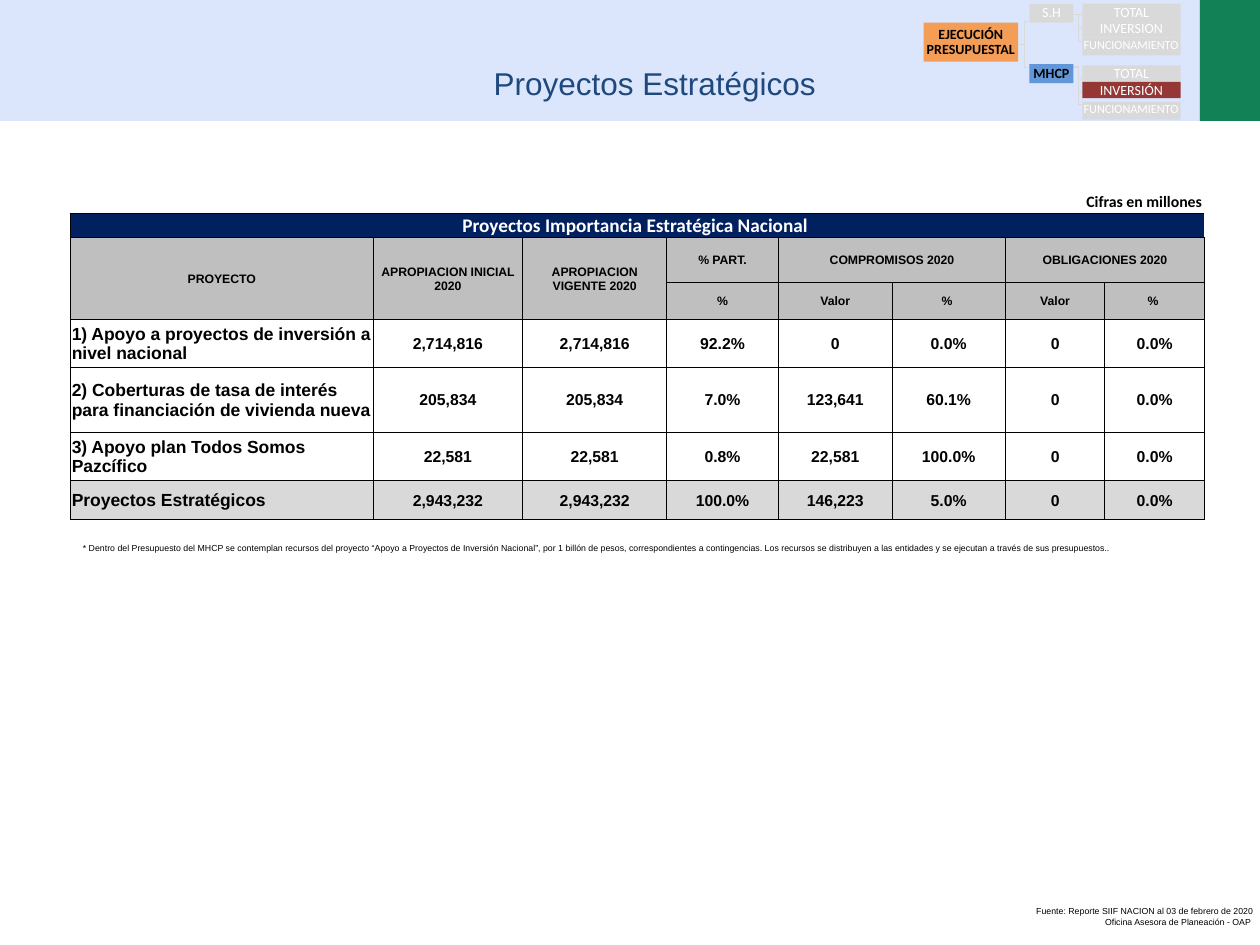
from lxml import etree
from pptx import Presentation, util as u
from pptx.dml.color import RGBColor
from pptx.enum import shapes, text
from pptx.oxml import ns

Inches, Pt = u.Inches, u.Pt
LEFT, CENTER, RIGHT, JUSTIFY = (text.PP_ALIGN.LEFT, text.PP_ALIGN.CENTER,
                                text.PP_ALIGN.RIGHT, text.PP_ALIGN.JUSTIFY)
TOP, MIDDLE = text.MSO_ANCHOR.TOP, text.MSO_ANCHOR.MIDDLE


class Theme:
    black, white = "000000", "FFFFFF"
    green, band, title = "138156", "DBE6FC", "1F497D"
    orange, blue, red, muted = "F79646", "558ED5", "953735", "D9D9D9"
    navy, header = "002060", "BFBFBF"
    sans, body = "Arial", "Calibri"
    title_pt, banner_pt, project_pt, value_pt = 18, 11, 10, 9
    tree_pt, small_pt, note_pt = 8, 7, 5


def write(frame, content, size, font, color, align, bold=False, anchor=TOP):
    """Fill a text frame (or a table cell's) and format its runs."""
    frame.text = content
    frame.word_wrap = True
    frame.vertical_anchor = anchor
    for paragraph in frame.paragraphs:
        paragraph.alignment = align
        for run in paragraph.runs:
            run.font.size, run.font.name, run.font.bold = Pt(size), font, bold
            run.font.color.rgb = RGBColor.from_string(color)


def add_block(x, y, w, h, color):
    """Add a borderless, shadowless rectangle."""
    block = slide.shapes.add_shape(shapes.MSO_SHAPE.RECTANGLE, Inches(x), Inches(y), Inches(w), Inches(h))
    block.shadow.inherit = False
    block.fill.solid()
    block.fill.fore_color.rgb = RGBColor.from_string(color)
    block.line.fill.background()
    return block


prs = Presentation()
prs.slide_width, prs.slide_height = Inches(10), Inches(7.5)
slide = prs.slides.add_slide(prs.slide_layouts[6])

# Header band
add_block(9.52, 0, 0.48, 0.96, Theme.green)
add_block(0, 0, 9.52, 0.96, Theme.band)

# Title, units, footnote and source
captions = [
    ((3.82, 0.46, 5.31, 0.4), "Proyectos Estratégicos",
     Theme.title_pt, Theme.sans, Theme.title, LEFT, False, TOP),
    ((8.11, 1.37, 1.97, 0.33), "Cifras en millones ",
     Theme.value_pt, Theme.body, Theme.black, CENTER, True, MIDDLE),
    ((0.56, 4.26, 9.14, 0.19),
     "* Dentro del Presupuesto del MHCP se contemplan recursos del proyecto “Apoyo a Proyectos de "
     "Inversión Nacional”, por 1 billón de pesos, correspondientes a contingencias. Los recursos se "
     "distribuyen a las entidades y se ejecutan a través de sus presupuestos.. ",
     Theme.note_pt, Theme.sans, Theme.black, JUSTIFY, False, TOP),
    ((6.52, 7.14, 3.53, 0.27),
     "Fuente: Reporte SIIF NACION al 03 de febrero de 2020\nOficina Asesora de Planeación - OAP ",
     Theme.note_pt, Theme.sans, Theme.black, RIGHT, False, TOP),
]
for place, content, *style in captions:
    caption = slide.shapes.add_textbox(*map(Inches, place))
    write(caption.text_frame, content, *style)
    if content.startswith("Cifras"):
        caption.text_frame.paragraphs[0].line_spacing = Pt(20)

# Navigation tree: branches (start x, start y, end x, end ys)
branches = [
    (8.52, 0.53, 8.59, (0.83, 0.73, 0.62)),
    (8.52, 0.11, 8.59, (0.33, 0.22, 0.11)),
    (8.09, 0.35, 8.16, (0.53, 0.17)),
]
for x1, y1, x2, ends in branches:
    for y2 in ends:
        kind = shapes.MSO_CONNECTOR.STRAIGHT if y1 == y2 else shapes.MSO_CONNECTOR.ELBOW
        branch = slide.shapes.add_connector(kind, Inches(x1), Inches(y1), Inches(x2), Inches(y2))
        branch.line.color.rgb = RGBColor.from_string(Theme.muted)
        branch.line.width = Pt(0.25)
        etree.SubElement(branch._element.spPr, ns.qn("a:effectLst"))

# Navigation tree: nodes (place, label, fill)
nodes = [
    ((7.33, 0.18, 0.75, 0.31), "EJECUCIÓN PRESUPUESTAL", Theme.orange),
    ((8.17, 0.03, 0.35, 0.15), "S.H", Theme.muted),
    ((8.59, 0.03, 0.78, 0.13), "TOTAL", Theme.muted),
    ((8.59, 0.16, 0.78, 0.14), "INVERSION", Theme.muted),
    ((8.59, 0.3, 0.78, 0.14), "FUNCIONAMIENTO", Theme.muted),
    ((8.17, 0.51, 0.35, 0.15), "MHCP", Theme.blue),
    ((8.59, 0.52, 0.78, 0.13), "TOTAL", Theme.muted),
    ((8.59, 0.81, 0.78, 0.14), "FUNCIONAMIENTO", Theme.muted),
    ((8.59, 0.65, 0.78, 0.13), "INVERSIÓN", Theme.red),
]
for place, label, color in nodes:
    node = add_block(*place, color)
    frame = node.text_frame
    frame.margin_left = frame.margin_right = frame.margin_top = frame.margin_bottom = Inches(0.01)
    active = color in (Theme.orange, Theme.blue)
    long_label = label == "FUNCIONAMIENTO"
    write(frame, label, Theme.small_pt if long_label else Theme.tree_pt, Theme.body,
          Theme.black if active else Theme.white, LEFT if long_label else CENTER,
          active, MIDDLE if active else TOP)
    frame.paragraphs[0].line_spacing = 0.9
    if active:
        fill_color = node._element.spPr.find(ns.qn("a:solidFill"))[0]
        etree.SubElement(fill_color, ns.qn("a:alpha"), val="90000")

# Projects table
rows = [
    ["Proyectos Importancia Estratégica Nacional "] + [""] * 7,
    ["PROYECTO", "APROPIACION INICIAL 2020", "APROPIACION VIGENTE 2020", "% PART.",
     "COMPROMISOS 2020", "", "OBLIGACIONES 2020", ""],
    ["", "", "", "%", "Valor", "% ", "Valor", "% "],
    ["1) Apoyo a proyectos de inversión a nivel nacional",
     "2,714,816", "2,714,816", "92.2%", "0", "0.0%", "0", "0.0%"],
    ["2) Coberturas de tasa de interés para financiación de vivienda nueva",
     "205,834", "205,834", "7.0%", "123,641", "60.1%", "0", "0.0%"],
    ["3) Apoyo plan Todos Somos Pazcífico",
     "22,581", "22,581", "0.8%", "22,581", "100.0%", "0", "0.0%"],
    ["Proyectos Estratégicos",
     "2,943,232", "2,943,232", "100.0%", "146,223", "5.0%", "0", "0.0%"],
]
col_widths = [2.4, 1.19, 1.14, 0.89, 0.9, 0.9, 0.79, 0.79]
row_heights = [0.19, 0.36, 0.29, 0.38, 0.52, 0.38, 0.31]
row_fills = [Theme.navy, Theme.header, Theme.header, None, None, None, Theme.muted]
merges = [(0, 0, 0, 7), (1, 0, 2, 0), (1, 1, 2, 1), (1, 2, 2, 2), (1, 4, 1, 5), (1, 6, 1, 7)]

projects = slide.shapes.add_table(len(rows), len(col_widths), Inches(0.56), Inches(1.69),
                                  Inches(9), Inches(2.43)).table
projects.first_row = projects.horz_banding = False
for column, width in zip(projects.columns, col_widths):
    column.width = Inches(width)
for row, height in zip(projects.rows, row_heights):
    row.height = Inches(height)

for r, values in enumerate(rows):
    for c, value in enumerate(values):
        cell = projects.cell(r, c)
        cell.margin_left = cell.margin_right = cell.margin_top = Inches(0.01)
        cell.margin_bottom = 0
        cell.vertical_anchor = MIDDLE
        if r == 0:
            size, font, color = Theme.banner_pt, Theme.body, Theme.white
        else:
            size = Theme.small_pt if r < 3 else Theme.value_pt if c else Theme.project_pt
            font, color = Theme.sans, Theme.black
        write(cell.text_frame, value, size, font, color,
              LEFT if r > 2 and c == 0 else CENTER, True)
        for side in "LTB" if r == 0 else "LRTB":
            border = etree.SubElement(cell._tc.get_or_add_tcPr(), ns.qn(f"a:ln{side}"), w=str(Pt(0.5)))
            paint = etree.SubElement(border, ns.qn("a:solidFill"))
            etree.SubElement(paint, ns.qn("a:srgbClr"), val=Theme.black)
        if row_fills[r]:
            cell.fill.solid()
            cell.fill.fore_color.rgb = RGBColor.from_string(row_fills[r])
        else:
            cell.fill.background()

for top, left, bottom, right in merges:
    projects.cell(top, left).merge(projects.cell(bottom, right))

prs.save("out.pptx")
